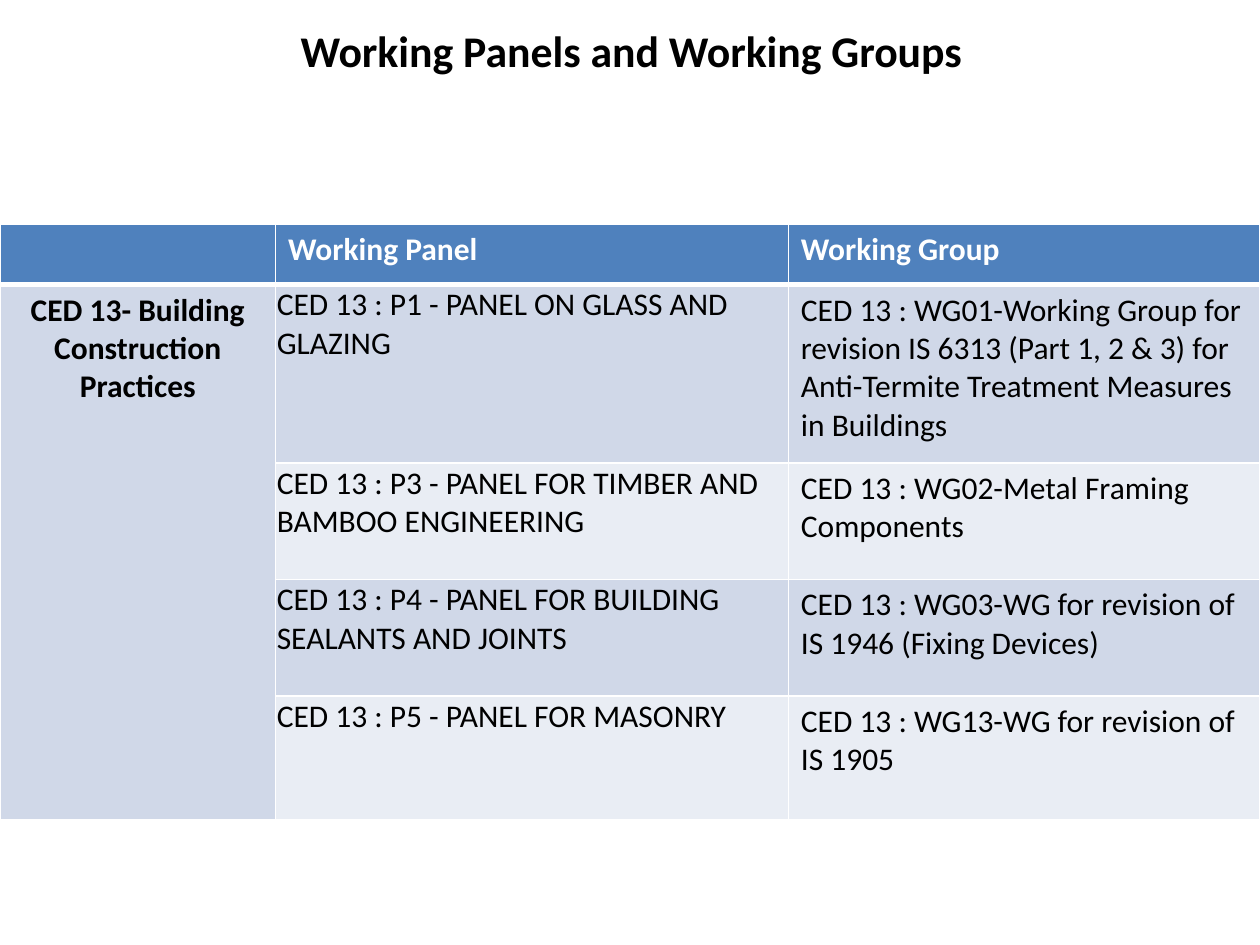
from pptx import Presentation
from pptx.dml.color import RGBColor
from pptx.enum.text import MSO_ANCHOR, PP_ALIGN
from pptx.oxml.ns import qn
from pptx.util import Pt
from lxml.etree import SubElement


def rgb(value):
    return RGBColor.from_string(value)


def set_text(tf, text, color, align=PP_ALIGN.LEFT, **fmt):
    tf.word_wrap = True
    p = tf.paragraphs[0]
    p.alignment = align
    r = p.add_run()
    r.text = text
    r.font.color.rgb = rgb(color)
    for name, value in {"name": "Calibri", "size": Pt(18), **fmt}.items():
        setattr(r.font, name, value)


prs = Presentation()
prs.slide_width, prs.slide_height = Pt(720), Pt(540)
s = prs.slides.add_slide(prs.slide_layouts[6])

# Title
tf = s.shapes.add_textbox(Pt(39.6), Pt(0), Pt(648), Pt(57)).text_frame
tf.vertical_anchor = MSO_ANCHOR.MIDDLE
set_text(tf, "Working Panels and Working Groups ", "000000", PP_ALIGN.CENTER,
         size=Pt(25), bold=True)

# Table content
rows = [
    ("", "Working Panel", "Working Group"),
    ("CED 13- Building Construction Practices",
     "CED 13 : P1 - PANEL ON GLASS AND GLAZING",
     "CED 13 : WG01-Working Group for revision IS 6313 (Part 1, 2 & 3) for "
     "Anti-Termite Treatment Measures in Buildings"),
    ("", "CED 13 : P3 - PANEL FOR TIMBER AND BAMBOO ENGINEERING",
     "CED 13 : WG02-Metal Framing Components"),
    ("", "CED 13 : P4 - PANEL FOR BUILDING SEALANTS AND JOINTS",
     "CED 13 : WG03-WG for revision of IS 1946 (Fixing Devices)"),
    ("", "CED 13 : P5 - PANEL FOR MASONRY",
     "CED 13 : WG13-WG for revision of IS 1905"),
]
widths = [157.5, 293, 269.5]
heights = [34.5, 102, 66.5, 66.5, 71]

# Table grid
table = s.shapes.add_table(len(rows), len(widths), Pt(0), Pt(128.2),
                           Pt(sum(widths)), Pt(sum(heights))).table
for col, width in zip(table.columns, widths):
    col.width = Pt(width)
for row, height in zip(table.rows, heights):
    row.height = Pt(height)
table.cell(1, 0).merge(table.cell(4, 0))

# Cells: text, borders, then fill
panel_margins = {"margin_left": Pt(0.7), "margin_top": Pt(0.7),
                 "margin_right": Pt(0.7), "margin_bottom": Pt(0)}
for i, row in enumerate(rows):
    for j, text in enumerate(row):
        cell = table.cell(i, j)
        header, committee = i == 0, j == 0
        if text:
            set_text(cell.text_frame, text, "FFFFFF" if header else "000000",
                     PP_ALIGN.CENTER if committee else PP_ALIGN.LEFT,
                     bold=header or committee)
        if j == 1 and not header:
            for name, value in panel_margins.items():
                setattr(cell, name, value)

        tc_pr = cell._tc.get_or_add_tcPr()
        for side in "LRTB":
            thick = (header and side == "B") or (i == 1 and side == "T")
            ln = SubElement(tc_pr, qn(f"a:ln{side}"), w=str(Pt(3 if thick else 1)))
            SubElement(SubElement(ln, qn("a:solidFill")), qn("a:srgbClr"), val="FFFFFF")

        cell.fill.solid()
        banded = "D0D8E8" if i % 2 or committee else "E9EDF4"
        cell.fill.fore_color.rgb = rgb("4F81BD" if header else banded)

prs.save("out.pptx")
